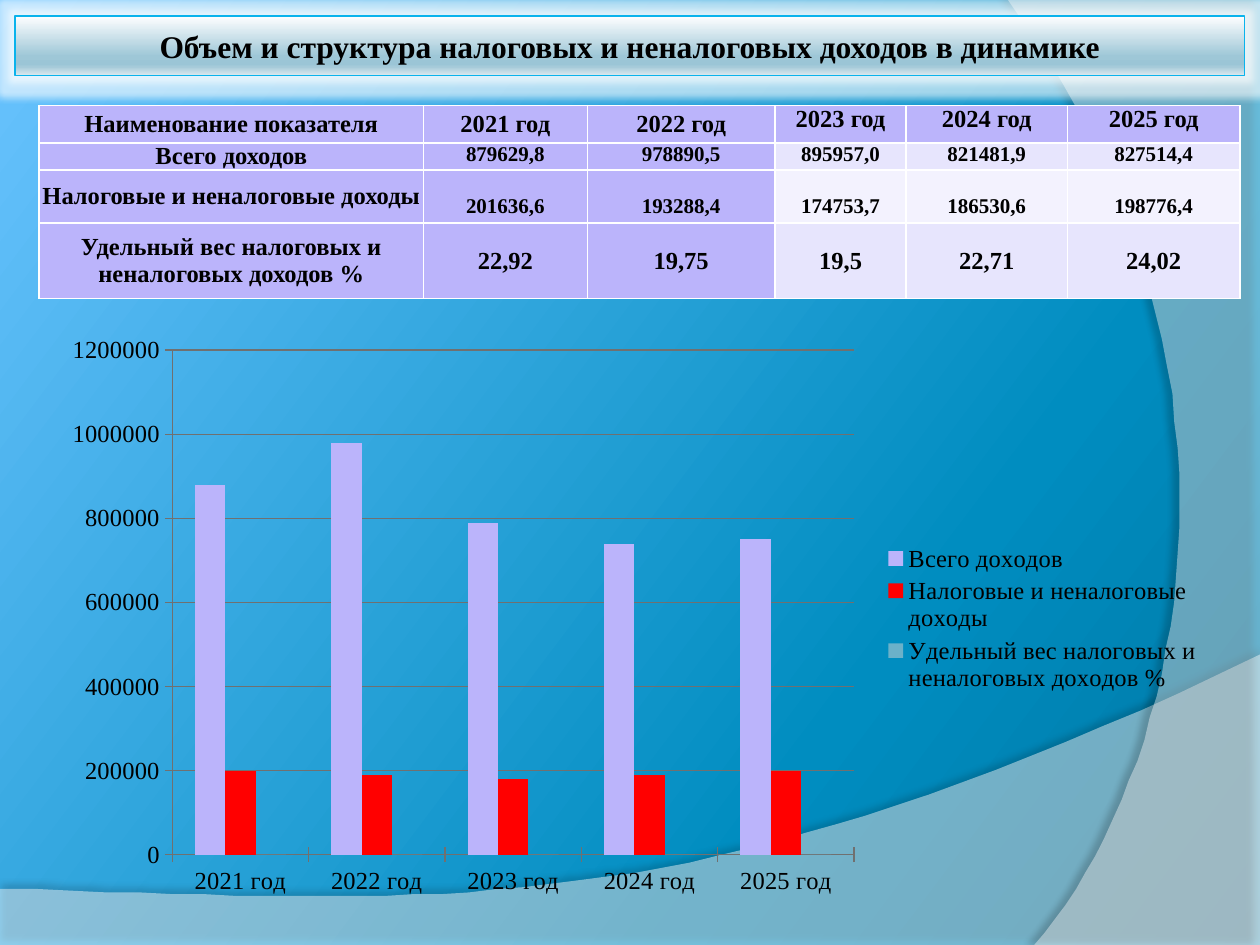
"""Builds a slide on tax and non-tax revenue: title, table and column chart."""
from lxml.etree import SubElement
from pptx import Presentation
from pptx.chart.data import CategoryChartData
from pptx.dml.color import RGBColor
from pptx.enum.chart import XL_CHART_TYPE, XL_LEGEND_POSITION, XL_TICK_MARK
from pptx.enum.shapes import MSO_SHAPE
from pptx.enum.text import MSO_ANCHOR, PP_ALIGN
from pptx.oxml import parse_xml
from pptx.oxml.ns import nsdecls, qn
from pptx.util import Pt

FONT = "Times New Roman"
BLACK = RGBColor(0x00, 0x00, 0x00)
WHITE = RGBColor(0xFF, 0xFF, 0xFF)
CYAN = RGBColor(0x0A, 0xB3, 0xEC)
LILAC = RGBColor(0xBB, 0xB4, 0xFB)
PALE = RGBColor(0xE7, 0xE5, 0xFD)
FAINT = RGBColor(0xF3, 0xF2, 0xFE)
RED = RGBColor(0xFF, 0x00, 0x00)
TEAL = RGBColor(0x6B, 0xB1, 0xC9)
GREY = RGBColor(0x70, 0x70, 0x70)

TITLE = "Объем и структура налоговых и неналоговых доходов в динамике"
YEARS = [f"{year} год" for year in range(2021, 2026)]
TOTAL = "Всего доходов"
TAXES = "Налоговые и неналоговые доходы"
SHARE = "Удельный вес налоговых и неналоговых доходов %"

ROWS = [
    ["Наименование показателя", *YEARS],
    [TOTAL, "879629,8", "978890,5", "895957,0", "821481,9", "827514,4"],
    [TAXES, "201636,6", "193288,4", "174753,7", "186530,6", "198776,4"],
    [SHARE, "22,92", "19,75", "19,5", "22,71", "24,02"],
]
WIDTHS = [219.6, 93.6, 107.3, 74.9, 92.2, 98.6]
HEIGHTS = [21.4, 15.6, 30.2, 43.2]
TINTS = [LILAC, PALE, FAINT, PALE]

SERIES = [
    (TOTAL, (880000, 980000, 790000, 740000, 750000), LILAC),
    (TAXES, (200000, 190000, 180000, 190000, 200000), RED),
    (SHARE, (0, 0, 0, 0, 0), TEAL),
]
PLOT = (0.106, 0.043, 0.587, 0.869)
KEY = (0.715, 0.37, 0.28, 0.27)

SKY = [(0, "0076A1"), (30, "008DC0"), (100, "6AC3FF")]
GLASS = [(0, "FEFEFF"), (68, "9EC7D7"), (81, "9BC5D6"),
         (86, "A5CAD9"), (100, "DAE8EE")]
WAVES = [
    ([(0, 540), (720, 540), (720, 374.4)],
     [(720, 374.4), (402.5, 524.9), (281.5, 517.7), (0, 507.6)], 45, 35, 3.5, 270),
    ([(720, 0), (720, 540), (591.1, 540)],
     [(591.1, 540), (673.2, 445.7), (733, 216), (576, 0)], 40, 45, 4, 180),
]


def shade(fill, root, stops, angle):
    fill.gradient()
    fill.gradient_angle = angle
    group = next(root.iter(qn("a:gsLst")))
    for stop in list(group):
        group.remove(stop)
    for place, tint in stops:
        stop = SubElement(group, qn("a:gs"), pos=str(place * 1000))
        SubElement(stop, qn("a:srgbClr"), val=tint)


def effect(shape, body):
    shape.shadow.inherit = False
    old = shape._element.spPr.find(qn("a:effectLst"))
    new = parse_xml(f"<a:effectLst {nsdecls('a')}>{body}</a:effectLst>")
    old.getparent().replace(old, new)


def curve(ends, count=40):
    start, one, two, stop = ends
    for step in range(1, count + 1):
        t = step / count
        u = 1 - t
        yield tuple(u**3 * a + 3 * u * u * t * b + 3 * u * t * t * c + t**3 * d
                    for a, b, c, d in zip(start, one, two, stop))


def add_wave(slide, edge, bend, alpha, dark, shift, angle):
    pen = slide.shapes.build_freeform(*edge[0], scale=Pt(1))
    pen.add_line_segments([*edge[1:], *curve(bend)], close=True)
    wave = pen.convert_to_shape()
    wave.fill.solid()
    wave.fill.fore_color.rgb = WHITE
    tint = wave._element.spPr.find(qn("a:solidFill"))[0]
    SubElement(tint, qn("a:alpha"), val=str(alpha * 1000))
    wave.line.fill.background()
    effect(wave, f'<a:outerShdw blurRad="{Pt(4)}" dist="{Pt(shift)}" dir="{angle * 60000}">'
                 f'<a:srgbClr val="000000"><a:alpha val="{dark * 1000}"/></a:srgbClr>'
                 '</a:outerShdw>')


def style(font, size, bold=False):
    font.name = FONT
    font.size = Pt(size)
    font.bold = bold
    font.color.rgb = BLACK


def write(frame, text, size):
    frame.text = text
    para = frame.paragraphs[0]
    para.alignment = PP_ALIGN.CENTER
    style(para.font, size, True)


def add_title(slide):
    bar = slide.shapes.add_shape(MSO_SHAPE.RECTANGLE, Pt(8.6), Pt(9.2), Pt(702.7), Pt(33.8))
    shade(bar.fill, bar._element, GLASS, 270)
    bar.line.color.rgb = CYAN
    bar.line.width = Pt(0.75)
    effect(bar, f'<a:glow rad="{Pt(8)}"><a:srgbClr val="FFFFFF">'
                '<a:alpha val="60000"/></a:srgbClr></a:glow>')
    bar.text_frame.vertical_anchor = MSO_ANCHOR.MIDDLE
    write(bar.text_frame, TITLE, 18)


def frame_cell(cell, row):
    props = cell._tc.get_or_add_tcPr()
    for spot, side in enumerate("LRTB"):
        thick = 1.5 if (row, side) in ((0, "B"), (1, "T")) else 1
        props.insert(spot, parse_xml(
            f'<a:ln{side} {nsdecls("a")} w="{Pt(thick)}"><a:solidFill>'
            f'<a:srgbClr val="{WHITE}"/></a:solidFill></a:ln{side}>'))


def add_grid(slide):
    grid = slide.shapes.add_table(len(ROWS), len(WIDTHS), Pt(22.4), Pt(60.3),
                                  Pt(sum(WIDTHS)), Pt(sum(HEIGHTS))).table
    for column, width in zip(grid.columns, WIDTHS):
        column.width = Pt(width)
    for row, (texts, height) in enumerate(zip(ROWS, HEIGHTS)):
        grid.rows[row].height = Pt(height)
        for col, text in enumerate(texts):
            cell = grid.cell(row, col)
            money = row in (1, 2) and col > 0
            cell.margin_left = cell.margin_right = Pt(5 if money else 0)
            cell.margin_top = 0
            cell.margin_bottom = Pt(3 if money and row == 2 else 0)
            cell.vertical_anchor = MSO_ANCHOR.MIDDLE
            if money:
                cell.vertical_anchor = MSO_ANCHOR.TOP if row == 1 else MSO_ANCHOR.BOTTOM
            elif row == 0 and col > 2:
                cell.vertical_anchor = MSO_ANCHOR.TOP
            write(cell.text_frame, text, 12 if money else 14)
            cell.fill.solid()
            cell.fill.fore_color.rgb = TINTS[row] if col > 2 else LILAC
            frame_cell(cell, row)


def place(node, box, inner=""):
    parts = zip("xywh", box)
    sizes = "".join(f'<c:{name} val="{size}"/>' for name, size in parts)
    modes = '<c:xMode val="edge"/><c:yMode val="edge"/>'
    layout = parse_xml(f'<c:layout {nsdecls("c")}><c:manualLayout>{inner}{modes}{sizes}'
                       '</c:manualLayout></c:layout>')
    for old in node.findall(qn("c:layout")):
        node.remove(old)
    mark = node.find(qn("c:legendPos"))
    node.insert(0 if mark is None else 1, layout)


def add_bars(slide):
    data = CategoryChartData(number_format="General")
    data.categories = YEARS
    for name, values, _ in SERIES:
        data.add_series(name, values)
    chart = slide.shapes.add_chart(XL_CHART_TYPE.COLUMN_CLUSTERED, Pt(28.1), Pt(185.8),
                                   Pt(663.8), Pt(331.9), data).chart
    style(chart.font, 14)
    chart.has_title = False
    chart.has_legend = True
    chart.legend.position = XL_LEGEND_POSITION.RIGHT
    chart.legend.include_in_layout = False
    plot = chart.plots[0]
    plot.gap_width = 150
    plot.overlap = 0
    plot.vary_by_categories = False
    for bars, (_, _, tint) in zip(plot.series, SERIES):
        bars.format.fill.solid()
        bars.format.fill.fore_color.rgb = tint
    scale = chart.value_axis
    scale.minimum_scale, scale.maximum_scale, scale.major_unit = 0, 1200000, 200000
    scale.has_major_gridlines = True
    scale.major_gridlines.format.line.color.rgb = GREY
    for axis in (scale, chart.category_axis):
        axis.major_tick_mark = XL_TICK_MARK.CROSS
        axis.format.line.color.rgb = GREY
        style(axis.tick_labels.font, 14)
    area = next(chart._chartSpace.iter(qn("c:plotArea")))
    place(area, PLOT, '<c:layoutTarget val="inner"/>')
    place(chart.legend._element, KEY)


def main():
    deck = Presentation()
    deck.slide_width, deck.slide_height = Pt(720), Pt(540)
    slide = deck.slides.add_slide(deck.slide_layouts[6])
    shade(slide.background.fill, slide._element, SKY, 143)
    for wave in WAVES:
        add_wave(slide, *wave)
    add_title(slide)
    add_grid(slide)
    add_bars(slide)
    deck.save("out.pptx")


if __name__ == "__main__":
    main()
